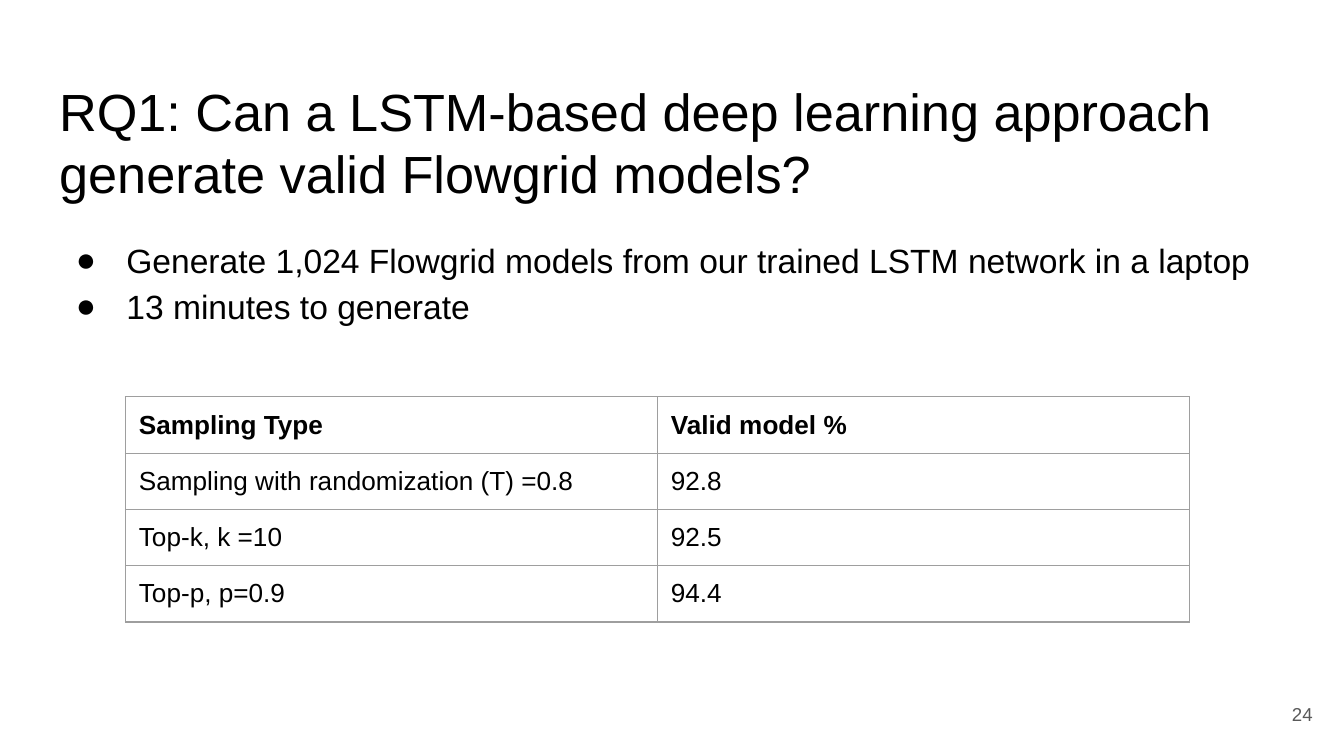
from dataclasses import dataclass

from lxml.etree import SubElement
from pptx import Presentation
from pptx.dml.color import RGBColor
from pptx.enum.text import MSO_ANCHOR, MSO_AUTO_SIZE, PP_ALIGN
from pptx.oxml import parse_xml
from pptx.oxml.ns import nsdecls, qn
from pptx.util import Pt


@dataclass(frozen=True)
class Theme:
    font: str = "Arial"
    ink: str = "000000"
    muted: str = "595959"
    border: str = "9E9E9E"
    title: float = 28
    body: float = 18
    cell: float = 14
    number: float = 10
    inset: float = 7.2


@dataclass(frozen=True)
class Area:
    left: float
    top: float
    width: float
    height: float

    def lengths(self) -> tuple:
        return Pt(self.left), Pt(self.top), Pt(self.width), Pt(self.height)


@dataclass(frozen=True)
class Result:
    sampling: str
    valid: str


THEME = Theme()
TITLE_AREA = Area(24.5, 35.1, 671, 45.1)
BODY_AREA = Area(24.5, 118, 671, 81.4)
TABLE_AREA = Area(67.2, 212.6, 570, 120.6)
NUMBER_AREA = Area(667.1, 367.2, 43.2, 31)

TITLE = "RQ1: Can a LSTM-based deep learning approach generate valid Flowgrid models?"
POINTS = [
    "Generate 1,024 Flowgrid models from our trained LSTM network in a laptop",
    "13 minutes to generate",
]
RESULTS = [
    Result("Sampling Type", "Valid model %"),
    Result("Sampling with randomization (T) =0.8", "92.8"),
    Result("Top-k, k =10", "92.5"),
    Result("Top-p, p=0.9", "94.4"),
]


def write(para, text: str, *, size: float, color: str = THEME.ink,
          bold: bool = False, align=PP_ALIGN.LEFT, spacing: float = 1.0) -> None:
    para.alignment = align
    para.line_spacing = spacing
    para.space_before = para.space_after = Pt(0)
    span = para.add_run()
    span.text = text
    span.font.name = THEME.font
    span.font.size = Pt(size)
    span.font.bold = bold
    span.font.color.rgb = RGBColor.from_string(color)


def set_margins(target) -> None:
    target.margin_left = target.margin_right = Pt(THEME.inset)
    target.margin_top = target.margin_bottom = Pt(THEME.inset)


def prepare(box, area: Area, anchor=MSO_ANCHOR.TOP):
    box.left, box.top, box.width, box.height = area.lengths()
    frame = box.text_frame
    frame.word_wrap = True
    frame.auto_size = MSO_AUTO_SIZE.NONE
    frame.vertical_anchor = anchor
    set_margins(frame)
    return frame


def add_bullet(para) -> None:
    properties = para._p.get_or_add_pPr()
    properties.set("marL", str(Pt(36)))
    properties.set("indent", str(-Pt(27)))
    color = SubElement(properties, qn("a:buClr"))
    SubElement(color, qn("a:srgbClr"), val=THEME.ink)
    SubElement(properties, qn("a:buFont"), typeface=THEME.font)
    SubElement(properties, qn("a:buChar"), char="●")


def add_borders(cell) -> None:
    properties = cell._tc.get_or_add_tcPr()
    for index, side in enumerate(("lnL", "lnR", "lnT", "lnB")):
        properties.insert(index, parse_xml(
            f'<a:{side} {nsdecls("a")} w="{Pt(0.75)}"><a:solidFill>'
            f'<a:srgbClr val="{THEME.border}"/></a:solidFill></a:{side}>'))


def add_results(page, results: list[Result], area: Area) -> None:
    table = page.shapes.add_table(len(results), 2, *area.lengths()).table
    table.first_row = table.horz_banding = False
    for row, result in enumerate(results):
        for column, text in enumerate((result.sampling, result.valid)):
            cell = table.cell(row, column)
            set_margins(cell)
            cell.fill.background()
            add_borders(cell)
            write(cell.text_frame.paragraphs[0], text, size=THEME.cell, bold=row == 0)


def main() -> None:
    deck = Presentation()
    deck.slide_width, deck.slide_height = Pt(720), Pt(405)
    page = deck.slides.add_slide(deck.slide_layouts[1])

    # Research question
    frame = prepare(page.shapes.title, TITLE_AREA)
    write(frame.paragraphs[0], TITLE, size=THEME.title)

    # Generation setup
    frame = prepare(page.placeholders[1], BODY_AREA)
    for index, point in enumerate(POINTS):
        para = frame.add_paragraph() if index else frame.paragraphs[0]
        write(para, point, size=THEME.body, spacing=1.15)
        add_bullet(para)

    # Validity by sampling type
    add_results(page, RESULTS, TABLE_AREA)

    # Page number
    box = page.shapes.add_textbox(*NUMBER_AREA.lengths())
    frame = prepare(box, NUMBER_AREA, MSO_ANCHOR.MIDDLE)
    write(frame.paragraphs[0], "24", size=THEME.number, color=THEME.muted,
          align=PP_ALIGN.RIGHT)

    deck.save("out.pptx")


if __name__ == "__main__":
    main()
